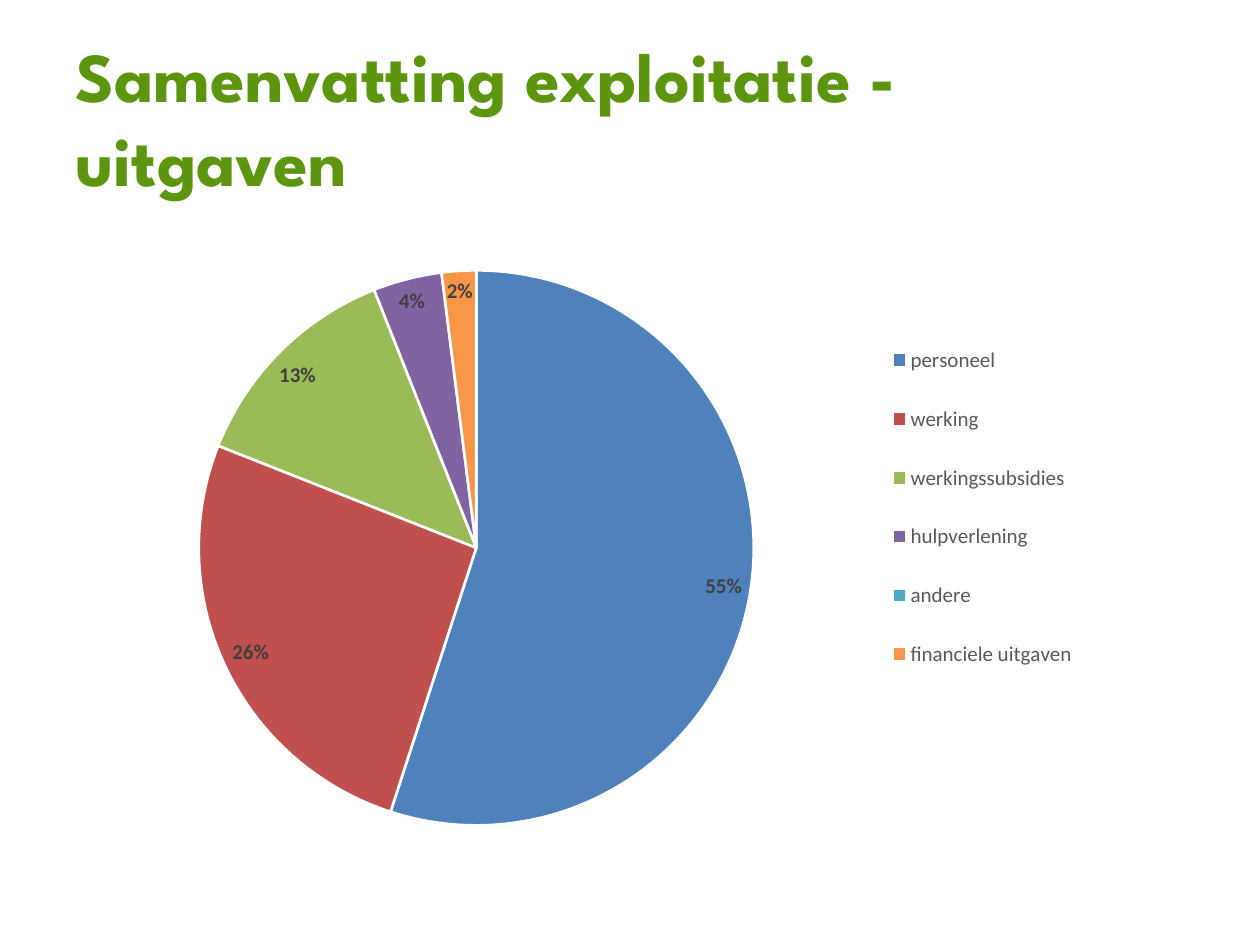
from dataclasses import dataclass

from lxml.etree import SubElement
from pptx import Presentation
from pptx.chart.data import CategoryChartData
from pptx.dml.color import RGBColor
from pptx.enum.chart import XL_CHART_TYPE, XL_LABEL_POSITION, XL_LEGEND_POSITION
from pptx.enum.text import MSO_ANCHOR
from pptx.oxml.ns import qn
from pptx.util import Inches, Pt


@dataclass(frozen=True)
class Theme:
    title_font: str = "League Spartan"
    body_font: str = "Calibri"
    title: str = "5C960E"
    label: str = "404040"
    legend: str = "595959"
    border: str = "FFFFFF"
    title_size: int = 40
    chart_size: int = 12
    border_width: float = 1.5


THEME = Theme()

EXPENSES = [
    ("personeel", 55, "4F81BD"),
    ("werking", 26, "C0504D"),
    ("werkingssubsidies", 13, "9BBB59"),
    ("hulpverlening", 4, "8064A2"),
    ("andere", 0, "4BACC6"),
    ("financiele uitgaven", 2, "F79646"),
]


def set_font(font, color, **values):
    for name, value in values.items():
        setattr(font, name, value)
    font.color.rgb = RGBColor.from_string(color)


def set_layout(layout, target, **fractions):
    manual = SubElement(layout, qn("c:manualLayout"))
    values = {"xMode": "edge", "yMode": "edge", **fractions}
    if target:
        values = {"layoutTarget": target, **values}
    for name, value in values.items():
        SubElement(manual, qn(f"c:{name}")).set("val", str(value))


def add_title(s, text, x, y, w, h):
    tf = s.shapes.add_textbox(x, y, w, h).text_frame
    for name, value in {"word_wrap": True, "vertical_anchor": MSO_ANCHOR.MIDDLE}.items():
        setattr(tf, name, value)
    r = tf.paragraphs[0].add_run()
    r.text = text
    set_font(r.font, THEME.title, name=THEME.title_font,
             size=Pt(THEME.title_size), bold=True)


def add_expense_pie(s, x, y, w, h):
    names, shares, colors = zip(*EXPENSES)
    data = CategoryChartData()
    data.categories = names
    data.add_series("Series 1", shares)
    chart = s.shapes.add_chart(XL_CHART_TYPE.PIE, x, y, w, h, data).chart
    chart.has_title = False
    chart.has_legend = True
    chart.font.name = THEME.body_font
    chart.font.size = Pt(THEME.chart_size)

    legend = chart.legend
    legend.position = XL_LEGEND_POSITION.RIGHT
    legend.include_in_layout = False
    set_font(legend.font, THEME.legend, name=THEME.body_font,
             size=Pt(THEME.chart_size), bold=False)

    plot = chart.plots[0]
    plot.vary_by_categories = True
    for i, color in enumerate(colors):
        fmt = plot.series[0].points[i].format
        fmt.fill.solid()
        fmt.fill.fore_color.rgb = RGBColor.from_string(color)
        fmt.line.color.rgb = RGBColor.from_string(THEME.border)
        fmt.line.width = Pt(THEME.border_width)

    labels = plot.series[0].data_labels
    settings = {
        "show_percentage": True,
        "show_value": False,
        "show_legend_key": False,
        "number_format": "0%",
        "number_format_is_linked": False,
        "position": XL_LABEL_POSITION.BEST_FIT,
    }
    for name, value in settings.items():
        setattr(labels, name, value)
    set_font(labels.font, THEME.label, name=THEME.body_font,
             size=Pt(THEME.chart_size), bold=True)

    area = chart.element.chart.plotArea
    layout = area.find(qn("c:layout"))
    if layout is None:
        layout = SubElement(area, qn("c:layout"))
        area.insert(0, layout)
    set_layout(layout, "inner", x=0.13, y=0.08, w=0.54, h=0.89)

    key = legend._element
    layout = key.find(qn("c:layout"))
    if layout is None:
        layout = SubElement(key, qn("c:layout"))
        key.find(qn("c:legendPos")).addnext(layout)
    set_layout(layout, None, x=0.78, y=0.15, w=0.22, h=0.62)


def main():
    prs = Presentation()
    prs.slide_width, prs.slide_height = Inches(10), Inches(7.5)
    s = prs.slides.add_slide(prs.slide_layouts[6])
    left, width = Inches(0.5), Inches(8.2)
    add_title(s, "Samenvatting exploitatie - uitgaven",
              left, Inches(0.3), width, Inches(1.25))
    add_expense_pie(s, left, Inches(1.75), width, Inches(4.95))
    prs.save("out.pptx")


if __name__ == "__main__":
    main()
